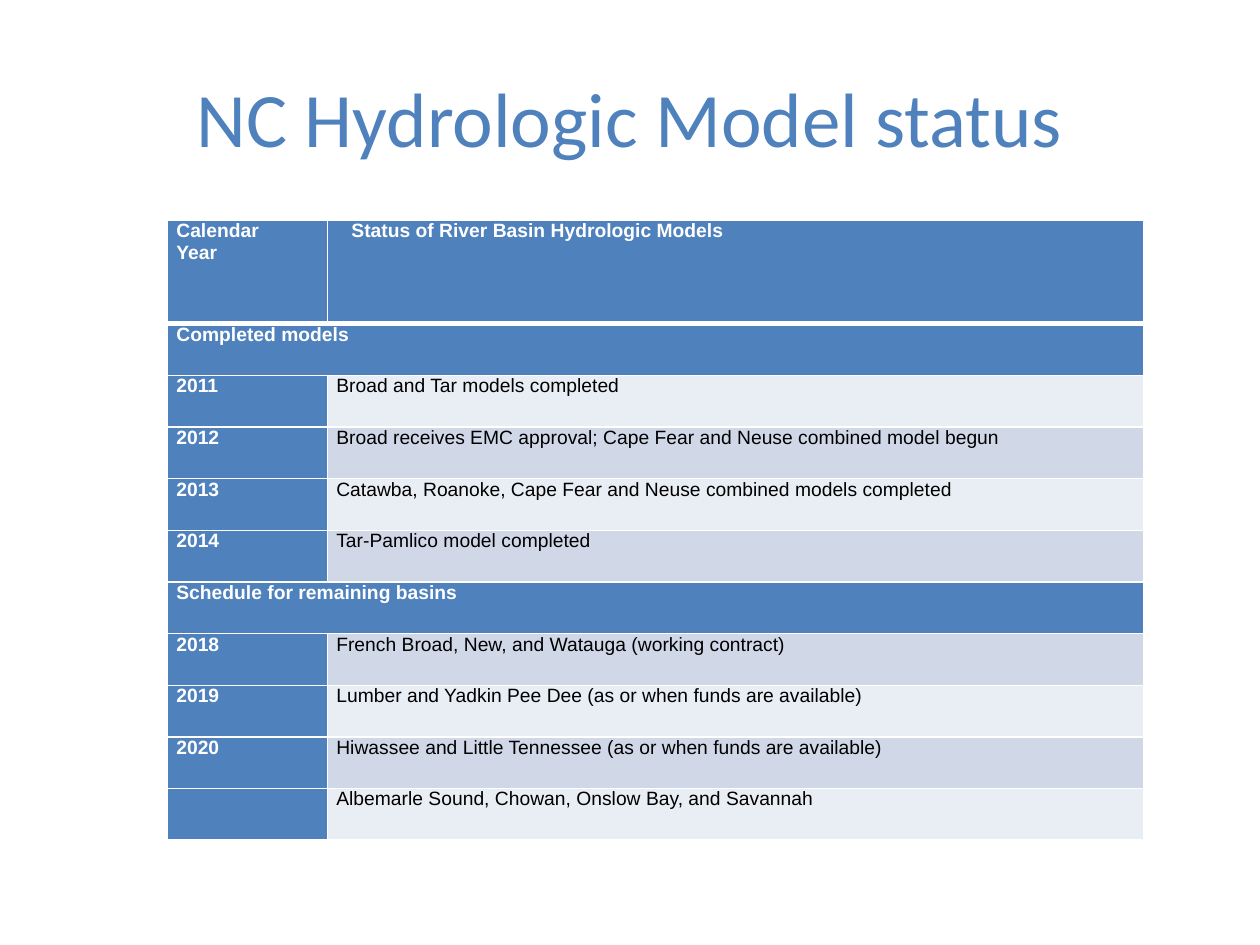
from dataclasses import dataclass

from lxml.etree import SubElement
from pptx import Presentation
from pptx.dml.color import RGBColor
from pptx.enum.text import MSO_ANCHOR, PP_ALIGN
from pptx.oxml.ns import qn
from pptx.util import Inches, Pt


@dataclass(frozen=True)
class Theme:
    blue: str = "4F81BD"
    white: str = "FFFFFF"
    black: str = "000000"
    bands: tuple = ("E9EDF4", "D0D8E8")
    title_font: str = "Calibri"
    body_font: str = "Arial"
    title_size: int = 44
    body_size: int = 11
    rule: int = 1
    header_rule: int = 3


HEADER = ("Calendar\nYear", "Status of River Basin Hydrologic Models")
# A row with None as its status is a section heading across both columns.
ROWS = [
    ("Completed models", None),
    ("2011", "Broad and Tar models completed"),
    ("2012", "Broad receives EMC approval; Cape Fear and Neuse combined model begun"),
    ("2013", "Catawba, Roanoke, Cape Fear and Neuse combined models completed"),
    ("2014", "Tar-Pamlico model completed"),
    ("Schedule for remaining basins", None),
    ("2018", "French Broad, New, and Watauga (working contract)"),
    ("2019", "Lumber and Yadkin Pee Dee (as or when funds are available)"),
    ("2020", "Hiwassee and Little Tennessee (as or when funds are available)"),
    ("", "Albemarle Sound, Chowan, Onslow Bay, and Savannah"),
]
COL_WIDTHS = (1.27, 6.48)
ROW_HEIGHT = 0.41


class SlideBuilder:
    def __init__(self, s, theme):
        self.s = s
        self.theme = theme

    def run(self, p, text, font, size, color, bold=False):
        r = p.add_run()
        r.text = text
        r.font.name = font
        r.font.size = Pt(size)
        r.font.bold = bold
        r.font.color.rgb = RGBColor.from_string(color)

    def title(self, text, left, top, width, height):
        t = self.theme
        sp = self.s.shapes.add_textbox(
            Inches(left), Inches(top), Inches(width), Inches(height))
        tf = sp.text_frame
        tf.word_wrap = True
        tf.vertical_anchor = MSO_ANCHOR.MIDDLE
        p = tf.paragraphs[0]
        p.alignment = PP_ALIGN.CENTER
        self.run(p, text, t.title_font, t.title_size, t.blue)

    def borders(self, cell, top, bottom):
        """Rule all four sides; must come before the cell's fill."""
        t = self.theme
        widths = {"a:lnL": t.rule, "a:lnR": t.rule, "a:lnT": top, "a:lnB": bottom}
        tc_pr = cell._tc.get_or_add_tcPr()
        for tag, width in widths.items():
            ln = SubElement(tc_pr, qn(tag), w=str(Pt(width)))
            fill = SubElement(ln, qn("a:solidFill"))
            SubElement(fill, qn("a:srgbClr"), val=t.white)

    def cell(self, cell, text, fill, color, bold, indent=0):
        t = self.theme
        cell.margin_left = cell.margin_right = Inches(0.07)
        cell.margin_top = cell.margin_bottom = 0
        cell.fill.solid()
        cell.fill.fore_color.rgb = RGBColor.from_string(fill)
        tf = cell.text_frame
        for i, line in enumerate(text.split("\n")):
            p = tf.add_paragraph() if i else tf.paragraphs[0]
            p.alignment = PP_ALIGN.JUSTIFY
            if indent:
                p._p.get_or_add_pPr().set("marL", str(Inches(indent)))
            if line:
                self.run(p, line, t.body_font, t.body_size, color, bold)

    def table(self, header, rows, left, top):
        t = self.theme
        heights = [2 * ROW_HEIGHT] + [ROW_HEIGHT] * len(rows)
        table = self.s.shapes.add_table(
            len(heights), len(COL_WIDTHS), Inches(left), Inches(top),
            Inches(sum(COL_WIDTHS)), Inches(sum(heights))).table
        for col, width in zip(table.columns, COL_WIDTHS):
            col.width = Inches(width)
        for i, (year, status) in enumerate([header, *rows]):
            table.rows[i].height = Inches(heights[i])
            first, second = table.cell(i, 0), table.cell(i, 1)
            for cell in (first, second):
                self.borders(cell, t.header_rule if i == 1 else t.rule,
                             t.header_rule if i == 0 else t.rule)
            self.cell(first, year, t.blue, t.white, True)
            if status is None:
                first.merge(second)
            elif i == 0:
                self.cell(second, status, t.blue, t.white, True, indent=0.12)
            else:
                self.cell(second, status, t.bands[i % 2], t.black, False)


def main():
    prs = Presentation()
    prs.slide_width, prs.slide_height = Inches(10), Inches(7.5)
    s = prs.slides.add_slide(prs.slide_layouts[6])
    builder = SlideBuilder(s, Theme())
    builder.title("NC Hydrologic Model status", 0.5, 0.3, 9, 1.25)
    builder.table(HEADER, ROWS, 1.33, 1.75)
    prs.save("out.pptx")


if __name__ == "__main__":
    main()
